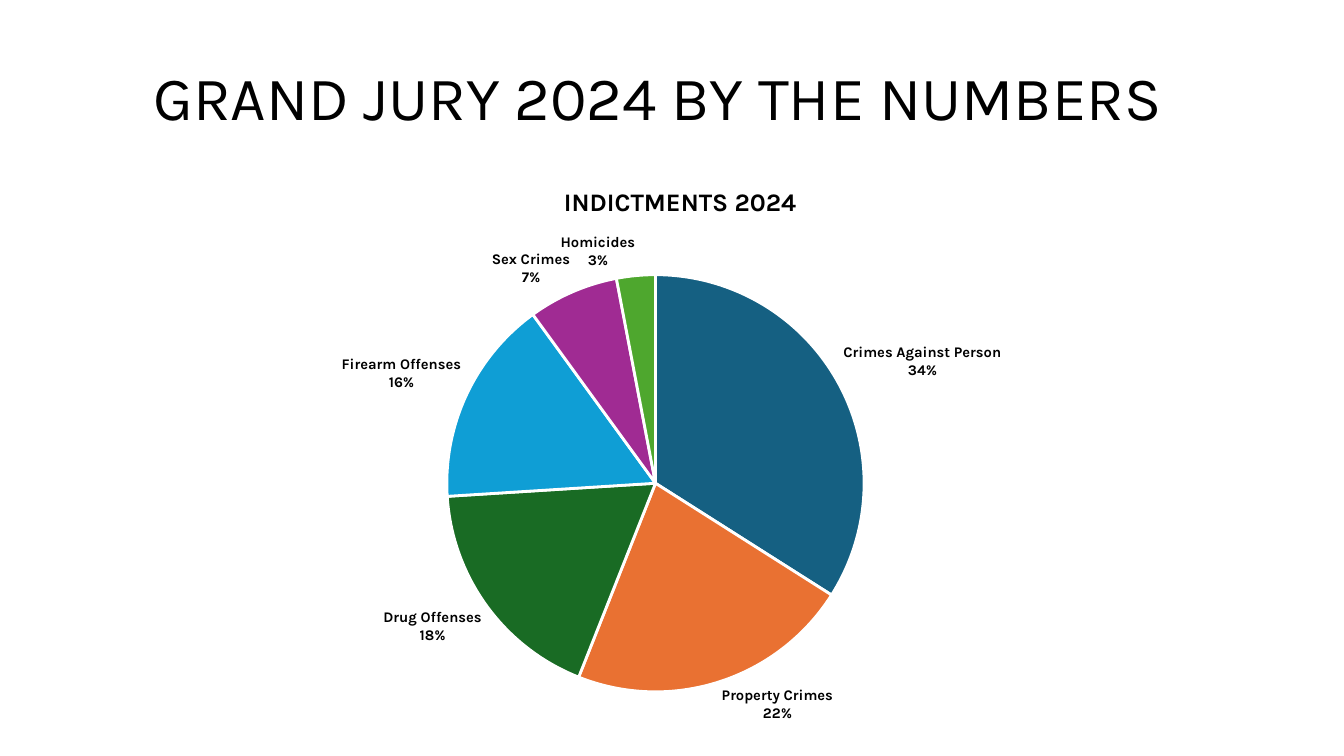
from pptx import Presentation, util as u
from pptx.chart.data import CategoryChartData
from pptx.dml.color import RGBColor
from pptx.enum import chart as ch, text
from pptx.oxml import parse_xml
from pptx.oxml.ns import nsdecls

HUES = {
    "text": "000000",
    "edge": "FFFFFF",
    "Crimes Against Person": "156082",
    "Property Crimes": "E97132",
    "Drug Offenses": "196B24",
    "Firearm Offenses": "0F9ED5",
    "Sex Crimes": "A02B93",
    "Homicides": "4EA72E",
}
COUNTS = {
    "Crimes Against Person": 34,
    "Property Crimes": 22,
    "Drug Offenses": 18,
    "Firearm Offenses": 16,
    "Sex Crimes": 7,
    "Homicides": 3,
}


def style(font, size, bold=False):
    font.name = "Karla"
    font.size = u.Pt(size)
    font.bold = bold
    font.color.rgb = RGBColor.from_string(HUES["text"])


def layout(**parts):
    tags = "".join(f'<c:{tag} val="{val}"/>' for tag, val in parts.items())
    return parse_xml(
        f'<c:layout {nsdecls("c")}><c:manualLayout>{tags}</c:manualLayout></c:layout>'
    )


deck = Presentation()
deck.slide_width = u.Inches(13.33)
deck.slide_height = u.Inches(7.5)
slide = deck.slides.add_slide(deck.slide_layouts[6])

box = slide.shapes.add_textbox(u.Inches(0.78), u.Inches(0.27), u.Inches(11.5), u.Inches(1.45))
frame = box.text_frame
frame.word_wrap = True
frame.vertical_anchor = text.MSO_ANCHOR.MIDDLE
head = frame.paragraphs[0]
head.text = "GRAND JURY 2024 BY THE NUMBERS"
head.alignment = text.PP_ALIGN.CENTER
head.line_spacing = 0.9
style(head.font, 44)

data = CategoryChartData()
data.categories = list(COUNTS)
data.add_series("Series 1", list(COUNTS.values()))
pie = slide.shapes.add_chart(
    ch.XL_CHART_TYPE.PIE, u.Inches(1.06), u.Inches(1.56), u.Inches(11.22), u.Inches(5.83), data
).chart
style(pie.font, 10)
pie.has_legend = False
pie.has_title = True
title = pie.chart_title
title.include_in_layout = False
label = title.text_frame.paragraphs[0]
label.text = "INDICTMENTS 2024"
style(label.font, 18, True)
for old in title._element.xpath("c:layout"):
    title._element.remove(old)
title._element.tx.addnext(layout(xMode="edge", yMode="edge", x=0.4, y=0.04))

plot = pie.plots[0]
plot.vary_by_categories = True
area = plot._element.getparent()
for old in area.xpath("c:layout"):
    area.remove(old)
area.insert(0, layout(
    layoutTarget="inner", xMode="edge", yMode="edge", x=0.3, y=0.2, w=0.37, h=0.71
))

series = plot.series[0]
for i, name in enumerate(COUNTS):
    slice_ = series.points[i].format
    slice_.fill.solid()
    slice_.fill.fore_color.rgb = RGBColor.from_string(HUES[name])
    slice_.line.color.rgb = RGBColor.from_string(HUES["edge"])
    slice_.line.width = u.Pt(2)

tags = series.data_labels
tags.show_value = False
tags.show_category_name = True
tags.show_percentage = True
tags.number_format = "0%"
tags.number_format_is_linked = False
tags.position = ch.XL_LABEL_POSITION.OUTSIDE_END
style(tags.font, 10.5, True)
gap = parse_xml(f'<c:separator {nsdecls("c")}>\n</c:separator>')
tags._element.xpath("c:showBubbleSize")[0].addnext(gap)

deck.save("out.pptx")
